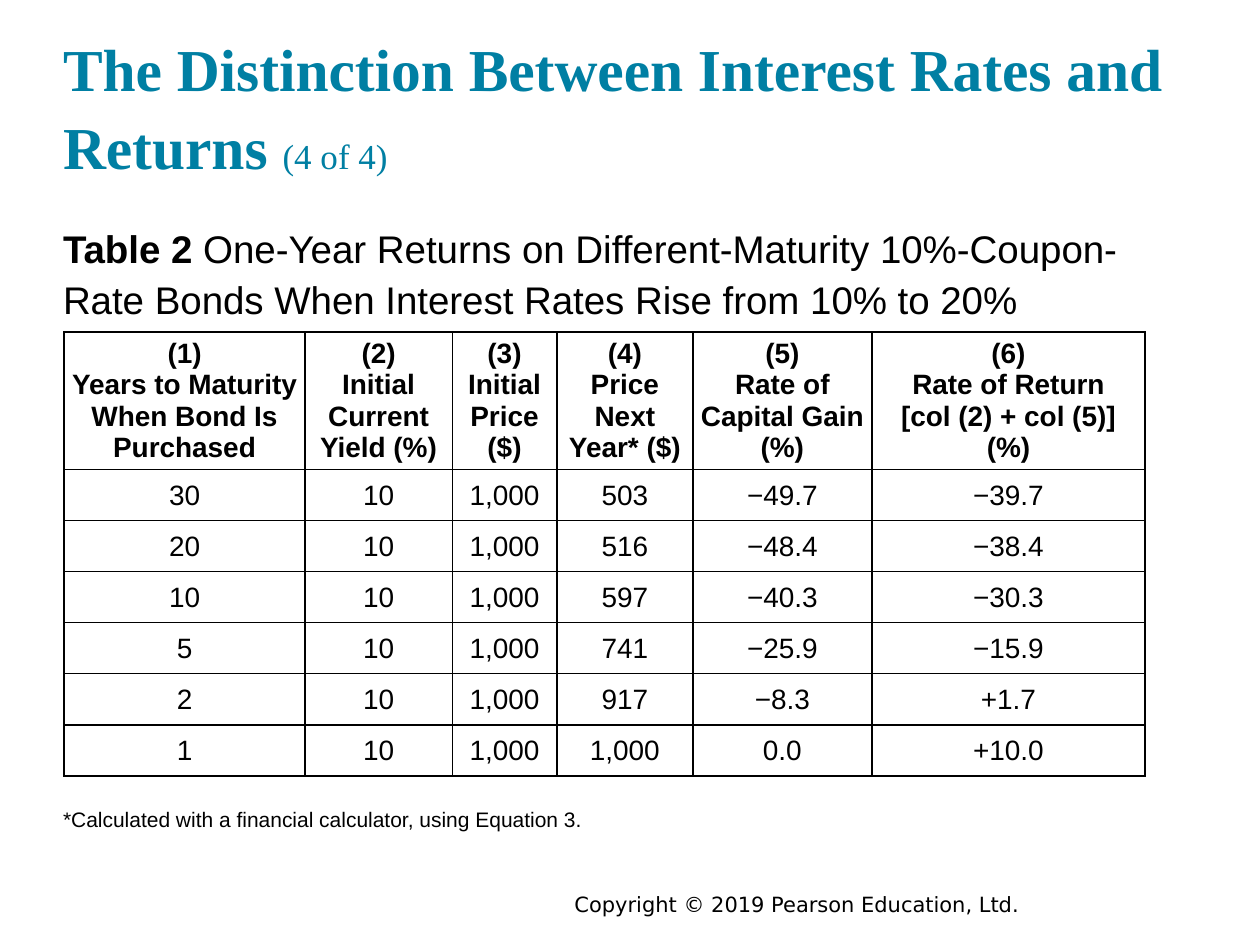
from dataclasses import dataclass

from lxml import etree
from pptx import Presentation
from pptx import util as u
from pptx.dml.color import RGBColor
from pptx.enum import text
from pptx.oxml.ns import qn


@dataclass(frozen=True)
class Theme:
    heading: str = "007FA3"
    ink: str = "000000"
    heading_font: str = "Times New Roman"
    body_font: str = "Arial"
    footer_font: str = "DejaVu Sans"
    title_size: int = 34
    part_size: int = 20
    caption_size: int = 22
    table_size: int = 16
    note_size: int = 12
    line_spacing: float = 1.1
    row_spacing: float = 1.15
    cell_margin: float = 3.6
    border: float = 1


class SlideBuilder:
    def __init__(self, slide, theme):
        self.slide = slide
        self.theme = theme

    def run(self, paragraph, words, size, font, bold=False, color=None):
        run = paragraph.add_run()
        run.text = words
        run.font.size = u.Pt(size)
        run.font.name = font
        run.font.bold = bold
        run.font.color.rgb = RGBColor.from_string(color or self.theme.ink)

    def placeholder(self, idx, box, anchor):
        """Move a placeholder and return its plain, left-aligned paragraph."""
        holder = self.slide.placeholders[idx]
        holder.left, holder.top, holder.width, holder.height = map(u.Pt, box)
        frame = holder.text_frame
        frame.margin_left = frame.margin_right = 0
        frame.margin_top = frame.margin_bottom = 0
        frame.word_wrap = True
        frame.auto_size = text.MSO_AUTO_SIZE.NONE
        frame.vertical_anchor = anchor
        paragraph = frame.paragraphs[0]
        paragraph.alignment = text.PP_ALIGN.LEFT
        paragraph.line_spacing = self.theme.line_spacing
        paragraph.space_before = u.Pt(0)
        return paragraph

    def title(self, words, part, box):
        t = self.theme
        paragraph = self.placeholder(0, box, text.MSO_ANCHOR.BOTTOM)
        self.run(paragraph, words, t.title_size, t.heading_font, True, t.heading)
        self.run(paragraph, part, t.part_size, t.heading_font, False, t.heading)

    def body(self, idx, runs, size, box):
        paragraph = self.placeholder(idx, box, text.MSO_ANCHOR.TOP)
        properties = paragraph._p.get_or_add_pPr()
        properties.set("marL", "0")
        properties.set("indent", "0")
        etree.SubElement(properties, qn("a:buNone"))
        for words, bold in runs:
            self.run(paragraph, words, size, self.theme.body_font, bold)

    def footer(self, words, box):
        frame = self.slide.shapes.add_textbox(*map(u.Pt, box)).text_frame
        frame.word_wrap = True
        paragraph = frame.paragraphs[0]
        paragraph.alignment = text.PP_ALIGN.CENTER
        self.run(paragraph, words, self.theme.note_size, self.theme.footer_font)

    def cell_borders(self, cell):
        properties = cell._tc.get_or_add_tcPr()
        for side in ("lnL", "lnR", "lnT", "lnB"):
            line = etree.SubElement(properties, qn(f"a:{side}"),
                                    w=str(u.Pt(self.theme.border)))
            fill = etree.SubElement(line, qn("a:solidFill"))
            etree.SubElement(fill, qn("a:srgbClr"), val=self.theme.ink)

    def cell(self, cell, lines, header):
        t = self.theme
        self.cell_borders(cell)
        cell.fill.background()
        cell.margin_left = cell.margin_right = u.Pt(t.cell_margin)
        cell.margin_top = cell.margin_bottom = u.Pt(t.cell_margin)
        cell.vertical_anchor = (text.MSO_ANCHOR.BOTTOM if header
                                else text.MSO_ANCHOR.TOP)
        frame = cell.text_frame
        for i, words in enumerate(lines):
            paragraph = frame.add_paragraph() if i else frame.paragraphs[0]
            paragraph.alignment = text.PP_ALIGN.CENTER
            if not header:
                paragraph.line_spacing = t.row_spacing
            self.run(paragraph, words, t.table_size, t.body_font, header)

    def table(self, headings, rows, left, top, widths, header_height, row_height):
        heights = [header_height] + [row_height] * len(rows)
        table = self.slide.shapes.add_table(
            len(heights), len(widths), u.Pt(left), u.Pt(top),
            u.Pt(sum(widths)), u.Pt(sum(heights))).table
        table.horz_banding = False
        for column, width in zip(table.columns, widths):
            column.width = u.Pt(width)
        for row, height in zip(table.rows, heights):
            row.height = u.Pt(height)
        for c, heading in enumerate(headings):
            self.cell(table.cell(0, c), [f"({c + 1})", *heading], True)
        for r, values in enumerate(rows, start=1):
            for c, value in enumerate(values):
                self.cell(table.cell(r, c), [value], False)


HEADINGS = [
    ["Years to Maturity When Bond Is Purchased"],
    ["Initial Current Yield (%)"],
    ["Initial Price ($)"],
    ["Price Next Year* ($)"],
    ["Rate of Capital Gain (%)"],
    ["Rate of Return", "[col (2) + col (5)] (%)"],
]
# Every bond starts at the same yield and price
INITIAL = ("10", "1,000")
# Years to maturity, price next year, capital gain, return
BONDS = [
    ("30", "503", "−49.7", "−39.7"),
    ("20", "516", "−48.4", "−38.4"),
    ("10", "597", "−40.3", "−30.3"),
    ("5", "741", "−25.9", "−15.9"),
    ("2", "917", "−8.3", "+1.7"),
    ("1", "1,000", "0.0", "+10.0"),
]


def main():
    theme = Theme()
    deck = Presentation()
    deck.slide_width, deck.slide_height = u.Pt(720), u.Pt(540)
    two_content = deck.slide_layouts[3]
    builder = SlideBuilder(deck.slides.add_slide(two_content), theme)

    # Title and table caption
    builder.title("The Distinction Between Interest Rates and Returns ",
                  "(4 of 4)", (36, 17.28, 648, 86.4))
    builder.body(1, [
        ("Table 2 ", True),
        ("One-Year Returns on Different-Maturity 10%-Coupon-Rate Bonds "
         "When Interest Rates Rise from 10% to 20%", False),
    ], theme.caption_size, (36, 126, 648, 54))

    # Bond returns
    returns = [(years, *INITIAL, *results) for years, *results in BONDS]
    builder.table(HEADINGS, returns, left=36.72, top=189.8,
                  widths=[137.52, 84.24, 59.76, 77.76, 102.24, 156.24],
                  header_height=78.4, row_height=29.2)

    # Table note and copyright
    builder.body(2, [("*Calculated with a financial calculator, "
                      "using Equation 3.", False)],
                 theme.note_size, (36, 459.36, 569.5, 26.64))
    builder.footer("Copyright © 2019 Pearson Education, Ltd.",
                   (212.4, 506.16, 486, 21.6))

    deck.save("out.pptx")


if __name__ == "__main__":
    main()
